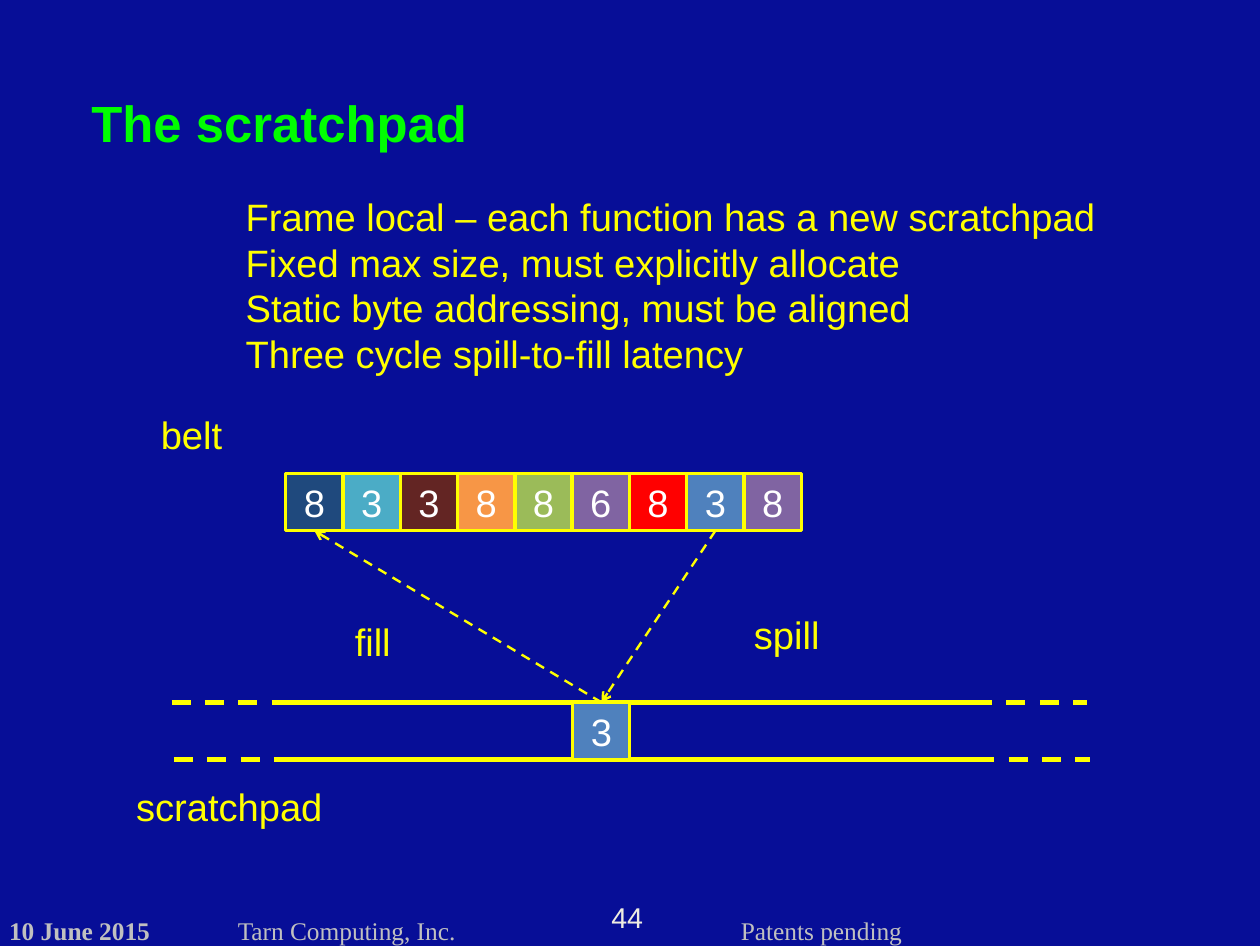
from dataclasses import dataclass

from lxml.etree import SubElement
from pptx import Presentation
from pptx.dml.color import RGBColor
from pptx.enum.dml import MSO_LINE
from pptx.enum.shapes import MSO_CONNECTOR, MSO_SHAPE
from pptx.enum.text import MSO_ANCHOR, PP_ALIGN
from pptx.oxml.ns import qn
from pptx.util import Inches, Pt


@dataclass(frozen=True)
class Theme:
    background: str = "070E97"
    title: str = "00FF00"
    accent: str = "FFFF00"
    footer: str = "C0C0C0"
    number: str = "EEECE1"
    digit: str = "FFFFFF"
    spilled: str = "4F81BD"
    sans: str = "Arial"
    serif: str = "Times New Roman"
    title_size: int = 32
    body_size: int = 24
    number_size: int = 18
    footer_size: int = 16


THEME = Theme()


@dataclass(frozen=True)
class Label:
    text: str
    left: float
    top: float
    width: float
    height: float
    size: int = THEME.body_size
    color: str = THEME.accent
    font: str = THEME.sans
    bold: bool = False
    align: PP_ALIGN = PP_ALIGN.CENTER
    inset_x: float = 0.1
    inset_y: float = 0.05
    wrap: bool = False


@dataclass(frozen=True)
class Cell:
    value: str
    fill: str


@dataclass(frozen=True)
class Footer:
    text: str
    left: float
    width: float
    bold: bool = False


CELL = 0.5
PITCH = 0.501
BELT_LEFT, BELT_TOP = 2.5, 4.14
PAD_TOP = 6.14

BELT = [
    Cell("8", "1F497D"), Cell("3", "4BACC6"), Cell("3", "632523"),
    Cell("8", "F79646"), Cell("8", "9BBB59"), Cell("6", "8064A2"),
    Cell("8", "FF0000"), Cell("3", THEME.spilled), Cell("8", "8064A2"),
]
TITLE = Label("The scratchpad", 0.8, 0.8, 3.32, 0.52, THEME.title_size,
              THEME.title, bold=True, align=PP_ALIGN.LEFT, inset_x=0, inset_y=0)
FACTS = "\n".join([
    "Frame local – each function has a new scratchpad",
    "Fixed max size, must explicitly allocate",
    "Static byte addressing, must be aligned",
    "Three cycle spill-to-fill latency",
])
LABELS = [
    Label("44", 5.33, 7.87, 0.31, 0.29, THEME.number_size, THEME.number,
          inset_x=0, inset_y=0),
    Label("belt", 1.3, 3.55, 0.75, 0.5),
    Label("scratchpad", 1.08, 6.8, 1.85, 0.5),
    Label("spill", 6.49, 5.3, 0.78, 0.5),
    Label("fill", 3, 5.36, 0.52, 0.5),
    Label(FACTS, 2.05, 1.64, 7.71, 1.72, align=PP_ALIGN.LEFT),
]
FOOTERS = [
    Footer("10 June 2015", 0.08, 1.6, bold=True),
    Footer("Tarn Computing, Inc.", 2.08, 2.2),
    Footer("Patents pending", 6.48, 1.7),
]


def write_text(shape, label: Label) -> None:
    tf = shape.text_frame
    tf.text = label.text
    frame = {
        "word_wrap": label.wrap, "vertical_anchor": MSO_ANCHOR.TOP,
        "margin_left": Inches(label.inset_x), "margin_right": Inches(label.inset_x),
        "margin_top": Inches(label.inset_y), "margin_bottom": Inches(label.inset_y),
    }
    for name, value in frame.items():
        setattr(tf, name, value)
    font = {"name": label.font, "size": Pt(label.size), "bold": label.bold}
    for p in tf.paragraphs:
        p.alignment = label.align
        for name, value in font.items():
            setattr(p.font, name, value)
        p.font.color.rgb = RGBColor.from_string(label.color)


def add_label(s, label: Label) -> None:
    box = (label.left, label.top, label.width, label.height)
    write_text(s.shapes.add_textbox(*map(Inches, box)), label)


def add_cell(s, cell: Cell, left: float, top: float):
    box = s.shapes.add_shape(MSO_SHAPE.RECTANGLE, Inches(left), Inches(top),
                             Inches(CELL), Inches(CELL))
    box.shadow.inherit = False
    box.fill.solid()
    box.fill.fore_color.rgb = RGBColor.from_string(cell.fill)
    box.line.color.rgb = RGBColor.from_string(THEME.accent)
    box.line.width = Pt(2)
    write_text(box, Label(cell.value, left, top, CELL, CELL, color=THEME.digit))
    box.text_frame.vertical_anchor = MSO_ANCHOR.MIDDLE
    return box


def add_line(s, x1: float, y1: float, x2: float, y2: float,
             width: float, dashed: bool):
    line = s.shapes.add_connector(MSO_CONNECTOR.STRAIGHT,
                                  *map(Inches, (x1, y1, x2, y2)))
    line.line.color.rgb = RGBColor.from_string(THEME.accent)
    line.line.width = Pt(width)
    if dashed:
        line.line.dash_style = MSO_LINE.DASH
    SubElement(line._element.spPr, qn("a:effectLst"))
    return line


def add_transfer(s, source, source_side: int, target, target_side: int) -> None:
    arrow = add_line(s, 0, 0, 1, 1, 1.5, True)
    arrow.begin_connect(source, source_side)
    arrow.end_connect(target, target_side)
    SubElement(arrow.line._get_or_add_ln(), qn("a:tailEnd"), type="arrow")


def main() -> None:
    prs = Presentation()
    prs.slide_width, prs.slide_height = Inches(11.02), Inches(8.27)
    s = prs.slides.add_slide(prs.slide_layouts[5])
    s.background.fill.solid()
    s.background.fill.fore_color.rgb = RGBColor.from_string(THEME.background)

    # Title
    title = s.shapes.title
    for name in ("left", "top", "width", "height"):
        setattr(title, name, Inches(getattr(TITLE, name)))
    write_text(title, TITLE)

    # Footer line
    for f in FOOTERS:
        add_label(s, Label(f.text, f.left, 8, f.width, 0.26, THEME.footer_size,
                           THEME.footer, THEME.serif, f.bold, PP_ALIGN.LEFT,
                           0, 0, wrap=True))

    # Belt
    belt = [add_cell(s, cell, BELT_LEFT + i * PITCH, BELT_TOP)
            for i, cell in enumerate(BELT)]

    # Scratchpad rails: solid middle, dashed ends
    for y, shift in ((PAD_TOP, 0), (PAD_TOP + CELL, 0.02)):
        for x1, x2, dashed in ((2.5, 8.51, False), (8.51, 9.51, True),
                               (1.5, 2.5, True)):
            add_line(s, x1 + shift, y, x2 + shift, y, 3, dashed)
    slot = add_cell(s, Cell("3", THEME.spilled), 5.01, PAD_TOP)

    # Spill and fill arrows
    add_transfer(s, belt[7], 2, slot, 0)
    add_transfer(s, slot, 0, belt[0], 2)

    # Labels and facts
    for label in LABELS:
        add_label(s, label)

    prs.save("out.pptx")


if __name__ == "__main__":
    main()
